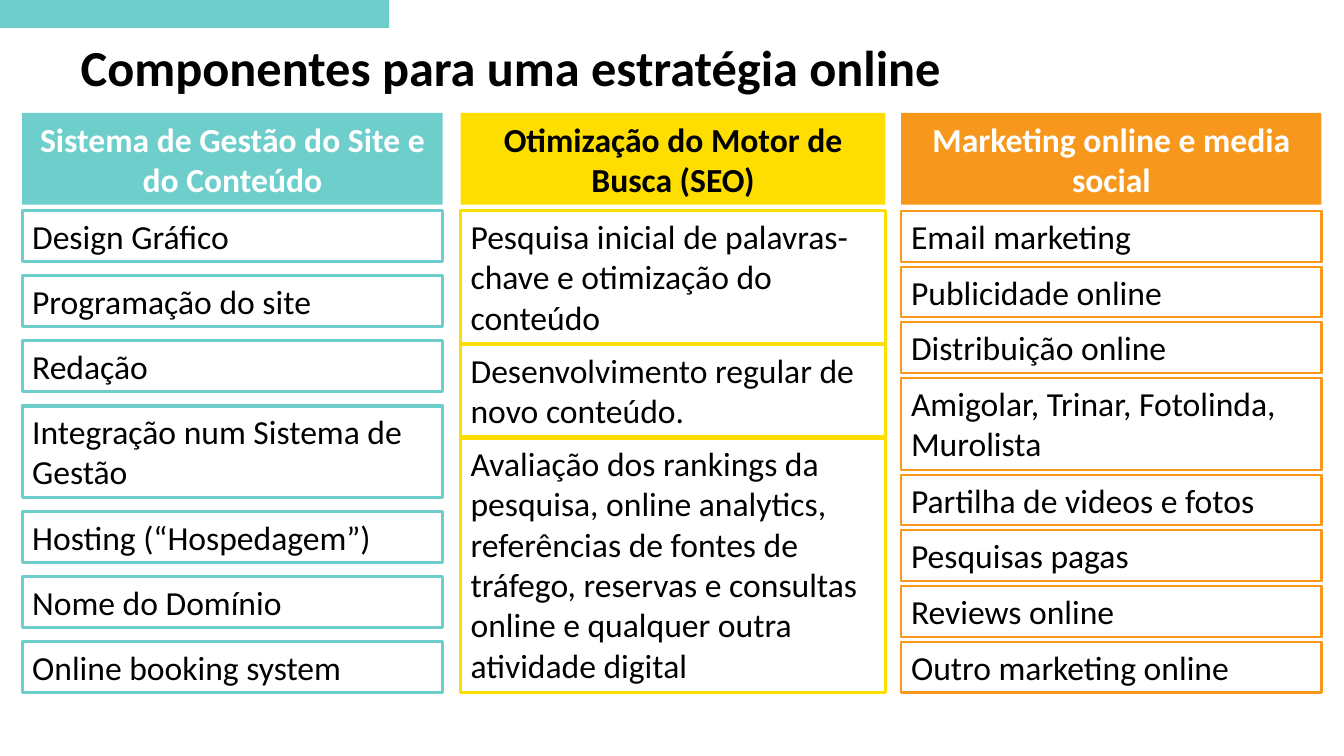
"""Build a slide with the three components of an online strategy."""
from pptx import Presentation
from pptx.dml.color import RGBColor
from pptx.enum.shapes import MSO_SHAPE
from pptx.enum.text import MSO_ANCHOR, MSO_AUTO_SIZE, PP_ALIGN
from pptx.util import Pt

RECT = MSO_SHAPE.RECTANGLE
TOP = MSO_ANCHOR.TOP
MIDDLE = MSO_ANCHOR.MIDDLE
LEFT = PP_ALIGN.LEFT
CENTER = PP_ALIGN.CENTER
FIXED = MSO_AUTO_SIZE.NONE

TEAL = RGBColor(0x6E, 0xCE, 0xCB)
YELLOW = RGBColor(0xFD, 0xDE, 0x00)
ORANGE = RGBColor(0xF7, 0x98, 0x1D)
BLACK = RGBColor(0, 0, 0)
WHITE = RGBColor(255, 255, 255)

FONT = "Calibri"
HEAD_TOP, HEAD_TALL = 80.64, 65.5
LIST_TOP, LIST_END = 150.6, 494.7
LINE, PAD = 29.1, 7.2

COLUMNS = [
    (15.9, 300.3, TEAL, WHITE, 2.25, "Sistema de Gestão do Site e do Conteúdo", [
        ("Design Gráfico", 1),
        ("Programação do site", 1),
        ("Redação", 1),
        ("Integração num Sistema de Gestão", 2),
        ("Hosting (“Hospedagem”)", 1),
        ("Nome do Domínio", 1),
        ("Online booking system", 1),
    ]),
    (329.1, 303.3, YELLOW, BLACK, 2.25, "Otimização do Motor de Busca (SEO)", [
        ("Pesquisa inicial de palavras-chave e otimização do conteúdo", 3),
        ("Desenvolvimento regular de novo conteúdo.", 2),
        ("Avaliação dos rankings da pesquisa, online analytics, "
         "referências de fontes de tráfego, reservas e consultas online "
         "e qualquer outra atividade digital", 6),
    ]),
    (643.7, 300.3, ORANGE, WHITE, 1.5, "Marketing online e media social", [
        ("Email marketing", 1),
        ("Publicidade online", 1),
        ("Distribuição online", 1),
        ("Amigolar, Trinar, Fotolinda, Murolista", 2),
        ("Partilha de videos e fotos", 1),
        ("Pesquisas pagas", 1),
        ("Reviews online", 1),
        ("Outro marketing online", 1),
    ]),
]


def write(shape, text, size, color, bold, align, anchor):
    """Fill a shape with one formatted paragraph."""
    frame = shape.text_frame
    frame.text = text
    frame.word_wrap = True
    frame.auto_size = FIXED
    frame.vertical_anchor = anchor
    para = frame.paragraphs[0]
    para.alignment = align
    font = para.runs[0].font
    font.name, font.size, font.bold = FONT, Pt(size), bold
    font.color.rgb = color
    return para


def add_rect(slide, left, top, width, height):
    """Add a rectangle without shadow, measured in points."""
    rect = slide.shapes.add_shape(RECT, Pt(left), Pt(top), Pt(width), Pt(height))
    rect.shadow.inherit = False
    return rect


def add_block(slide, left, top, width, height, color):
    """Add a solid rectangle without outline."""
    block = add_rect(slide, left, top, width, height)
    block.fill.solid()
    block.fill.fore_color.rgb = color
    block.line.fill.background()
    return block


def add_item(slide, left, top, width, height, color, weight, text):
    """Add an outlined box with left-aligned text."""
    item = add_rect(slide, left, top, width, height)
    item.fill.background()
    item.line.color.rgb = color
    item.line.width = Pt(weight)
    write(item, text, 24, BLACK, False, LEFT, TOP)


def add_column(slide, left, width, color, ink, weight, head, items):
    """Add a header and spread its items evenly down the column."""
    block = add_block(slide, left, HEAD_TOP, width, HEAD_TALL, color)
    write(block, head, 24, ink, True, CENTER, MIDDLE)
    talls = [lines * LINE + PAD for _, lines in items]
    gap = (LIST_END - LIST_TOP - sum(talls)) / (len(items) - 1)
    top = LIST_TOP
    for (text, _), tall in zip(items, talls):
        add_item(slide, left, top, width, tall, color, weight, text)
        top += tall + gap


def set_title(slide, text):
    """Place and format the slide title."""
    title = slide.shapes.title
    title.left, title.top = Pt(50.4), Pt(27.4)
    title.width, title.height = Pt(656), Pt(54.7)
    para = write(title, text, 36, BLACK, True, LEFT, TOP)
    para.line_spacing = 0.9


def main():
    """Build and save the slide."""
    deck = Presentation()
    deck.slide_width, deck.slide_height = Pt(960), Pt(540)
    slide = deck.slides.add_slide(deck.slide_layouts[5])
    add_block(slide, 0, 0, 278, 20, TEAL)
    set_title(slide, "Componentes para uma estratégia online")
    for column in COLUMNS:
        add_column(slide, *column)
    deck.save("out.pptx")


if __name__ == "__main__":
    main()
